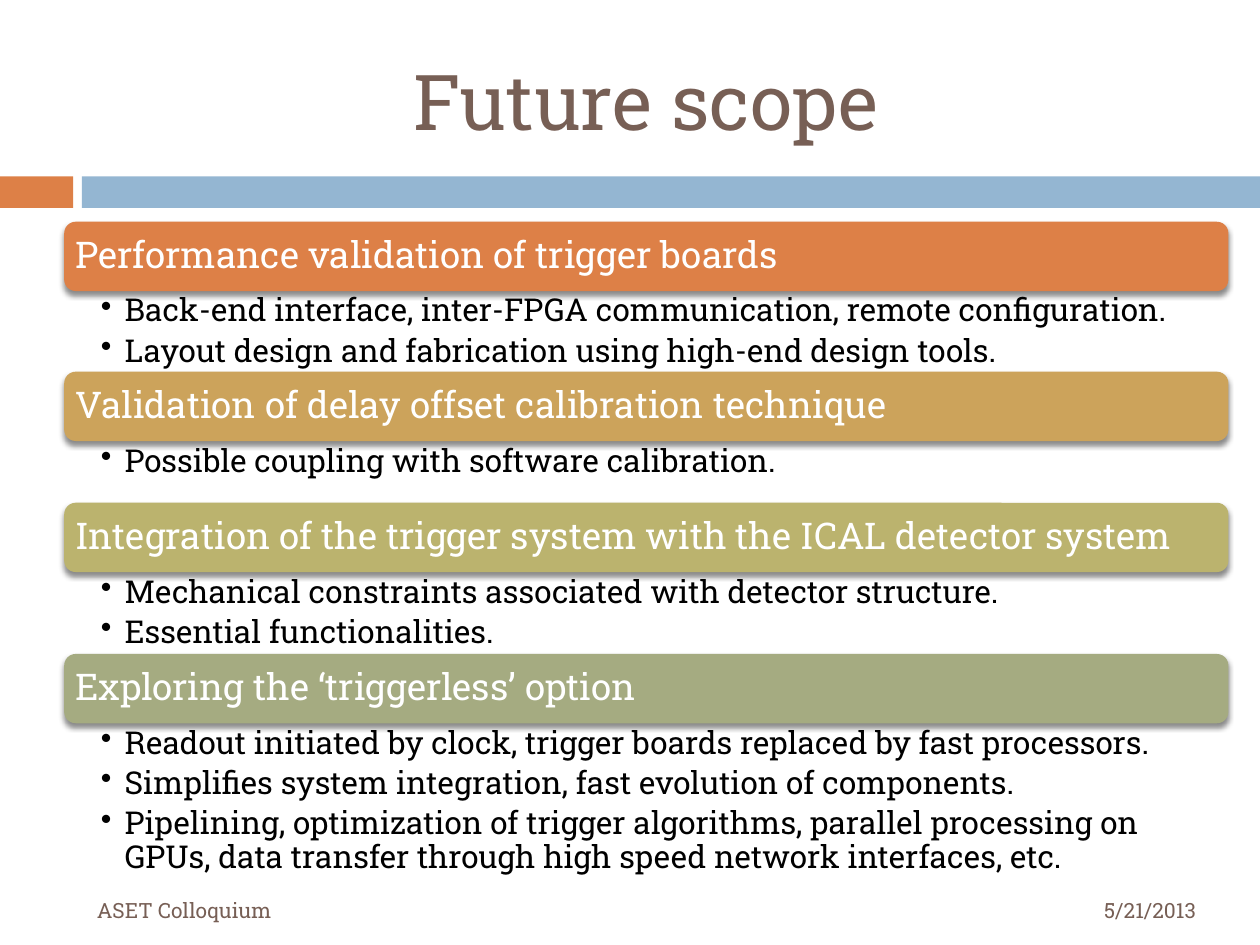
from lxml import etree
from pptx import Presentation
from pptx.dml.color import RGBColor
from pptx.enum.shapes import MSO_SHAPE as Shape
from pptx.enum.text import MSO_ANCHOR as Anchor, PP_ALIGN as Align
from pptx.oxml.ns import qn
from pptx.util import Inches, Pt

FONT = "Roboto Slab"
BROWN = RGBColor(0x77, 0x5F, 0x55)
ORANGE = RGBColor(0xDD, 0x80, 0x47)
BLUE = RGBColor(0x94, 0xB6, 0xD2)
GOLD = RGBColor(0xCC, 0xA3, 0x5B)
OLIVE = RGBColor(0xBB, 0xB3, 0x6E)
SAGE = RGBColor(0xA5, 0xAB, 0x81)
WHITE = RGBColor(0xFF, 0xFF, 0xFF)
BLACK = RGBColor(0, 0, 0)

LIST_LEFT, LIST_TOP, LIST_WIDTH = 0.51, 1.76, 9.24
HEADING_HEIGHT = 0.55

# Heading, colour, height of the bullet area, bullets
SECTIONS = [
    ("Performance validation of trigger boards", ORANGE, 0.64, [
        "Back-end interface, inter-FPGA communication, remote configuration.",
        "Layout design and fabrication using high-end design tools."]),
    ("Validation of delay offset calibration technique", GOLD, 0.49, [
        "Possible coupling with software calibration."]),
    ("Integration of the trigger system with the ICAL detector system", OLIVE, 0.65, [
        "Mechanical constraints associated with detector structure.",
        "Essential functionalities."]),
    ("Exploring the ‘triggerless’ option", SAGE, 1.25, [
        "Readout initiated by clock, trigger boards replaced by fast processors.",
        "Simplifies system integration, fast evolution of components.",
        "Pipelining, optimization of trigger algorithms, parallel processing on "
        "GPUs, data transfer through high speed network interfaces, etc."]),
]


def set_frame(frame, anchor, left=0.1, top=0.05, right=0.1, bottom=0.05):
    frame.word_wrap = True
    frame.vertical_anchor = anchor
    frame.margin_left, frame.margin_right = Inches(left), Inches(right)
    frame.margin_top, frame.margin_bottom = Inches(top), Inches(bottom)


def add_run(paragraph, text, size, color, align=Align.LEFT):
    paragraph.alignment = align
    run = paragraph.add_run()
    run.text = text
    run.font.name = FONT
    run.font.size = Pt(size)
    run.font.color.rgb = color


def add_label(slide, box, text, size, align):
    label = slide.shapes.add_textbox(*map(Inches, box))
    set_frame(label.text_frame, Anchor.MIDDLE)
    add_run(label.text_frame.paragraphs[0], text, size, BROWN, align)


def add_block(slide, kind, box, color):
    shape = slide.shapes.add_shape(kind, *map(Inches, box))
    shape.shadow.inherit = False
    shape.fill.solid()
    shape.fill.fore_color.rgb = color
    shape.line.fill.background()
    return shape


def add_drop_shadow(shape):
    effects = shape.element.spPr.find(qn("a:effectLst"))
    shadow = etree.SubElement(
        effects, qn("a:outerShdw"), blurRad=str(Pt(3)), dist=str(Pt(2.4)),
        dir=str(90 * 60000), rotWithShape="0")
    color = etree.SubElement(shadow, qn("a:srgbClr"), val=str(BLACK))
    etree.SubElement(color, qn("a:alpha"), val="45000")


def add_heading(slide, top, text, color):
    box = (LIST_LEFT, top, LIST_WIDTH, HEADING_HEIGHT)
    shape = add_block(slide, Shape.ROUNDED_RECTANGLE, box, color)
    add_drop_shadow(shape)
    # The rounded corners already push the text in a little
    set_frame(shape.text_frame, Anchor.MIDDLE, 0.06, 0.06, 0.06, 0.06)
    paragraph = shape.text_frame.paragraphs[0]
    paragraph.line_spacing = 0.9
    add_run(paragraph, text, 21, WHITE)


def add_bullets(slide, top, height, items):
    box = slide.shapes.add_textbox(
        *map(Inches, (LIST_LEFT, top, LIST_WIDTH, height)))
    frame = box.text_frame
    set_frame(frame, Anchor.TOP, 0.29, 0.03, 0.14, 0.03)
    for index, item in enumerate(items):
        paragraph = frame.add_paragraph() if index else frame.paragraphs[0]
        paragraph.level = 1
        paragraph.line_spacing = 0.9
        paragraph.space_after = Pt(3.6)
        add_run(paragraph, item, 18, BLACK)
        properties = paragraph._p.get_or_add_pPr()
        properties.set("marL", str(Inches(0.19)))
        properties.set("indent", str(-Inches(0.19)))
        etree.SubElement(properties, qn("a:buChar"), char="•")


def main():
    presentation = Presentation()
    presentation.slide_width, presentation.slide_height = Inches(10), Inches(7.5)
    slide = presentation.slides.add_slide(presentation.slide_layouts[6])

    # Title and the band below it
    add_block(slide, Shape.RECTANGLE, (0, 1.4, 0.58, 0.25), ORANGE)
    add_block(slide, Shape.RECTANGLE, (0.65, 1.4, 9.35, 0.25), BLUE)
    add_label(slide, (0.67, 0.25, 8.92, 1.08), "Future scope", 44, Align.CENTER)

    # Headings with bullets, stacked without gaps
    top = LIST_TOP
    for heading, color, height, items in SECTIONS:
        add_heading(slide, top, heading, color)
        add_bullets(slide, top + HEADING_HEIGHT, height, items)
        top += HEADING_HEIGHT + height

    # Footer
    add_label(slide, (0.67, 7.02, 5.93, 0.4), "ASET Colloquium", 12, Align.LEFT)
    add_label(slide, (6.67, 7.02, 2.92, 0.4), "5/21/2013", 12, Align.RIGHT)

    presentation.save("out.pptx")


if __name__ == "__main__":
    main()
